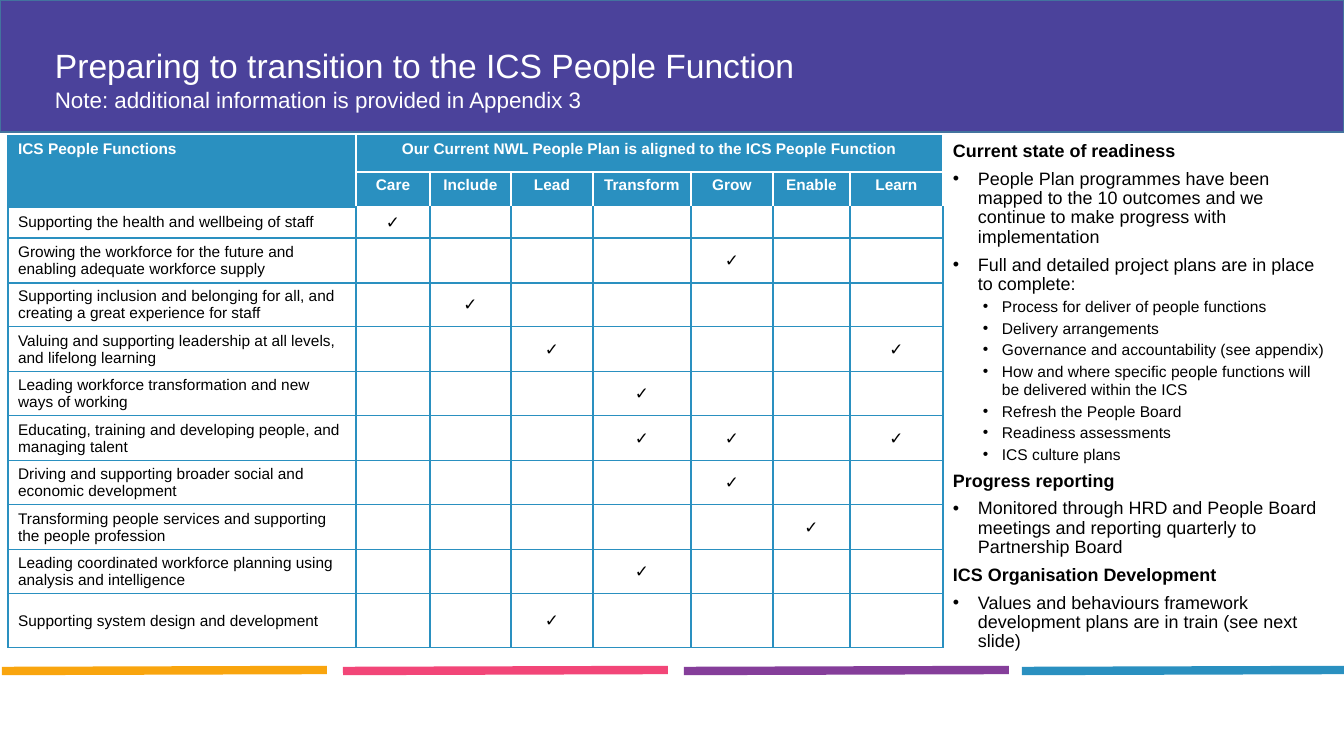
from lxml.etree import SubElement
from pptx import Presentation
from pptx.dml.color import RGBColor
from pptx.enum.shapes import MSO_CONNECTOR as CONNECTOR, MSO_SHAPE as SHAPE
from pptx.enum.text import MSO_ANCHOR as ANCHOR, PP_ALIGN as ALIGN
from pptx.oxml.ns import qn
from pptx.util import Emu, Pt

TITLE = "Preparing to transition to the ICS People Function"
NOTE = "Note: additional information is provided in Appendix 3"
FUNCTIONS_HEADING = "ICS People Functions"
PLAN_HEADING = "Our Current NWL People Plan is aligned to the ICS People Function"
THEMES = ["Care", "Include", "Lead", "Transform", "Grow", "Enable", "Learn"]
FUNCTIONS = [
    ("Supporting the health and wellbeing of staff", ["Care"]),
    ("Growing the workforce for the future and enabling adequate workforce supply", ["Grow"]),
    ("Supporting inclusion and belonging for all, and creating a great experience for staff",
     ["Include"]),
    ("Valuing and supporting leadership at all levels, and lifelong learning", ["Lead", "Learn"]),
    ("Leading workforce transformation and new ways of working", ["Transform"]),
    ("Educating, training and developing people, and managing talent",
     ["Transform", "Grow", "Learn"]),
    ("Driving and supporting broader social and economic development", ["Grow"]),
    ("Transforming people services and supporting the people profession", ["Enable"]),
    ("Leading coordinated workforce planning using analysis and intelligence", ["Transform"]),
    ("Supporting system design and development", ["Lead"]),
]
READINESS = [
    ("heading", "Current state of readiness"),
    ("bullet", "People Plan programmes have been mapped to the 10 outcomes and we continue to "
               "make progress with implementation"),
    ("bullet", "Full and detailed project plans are in place to complete:"),
    ("detail", "Process for deliver of people functions"),
    ("detail", "Delivery arrangements"),
    ("detail", "Governance and accountability (see appendix)"),
    ("detail", "How and where specific people functions will be delivered within the ICS"),
    ("detail", "Refresh the People Board"),
    ("detail", "Readiness assessments"),
    ("detail", "ICS culture plans"),
    ("heading", "Progress reporting"),
    ("bullet", "Monitored through HRD and People Board meetings and reporting quarterly to "
               "Partnership Board"),
    ("heading", "ICS Organisation Development"),
    ("bullet", "Values and behaviours framework development plans are in train (see next slide)"),
]
# kind: level, size, bold, line spacing, space before, left margin px, hanging px
STYLES = {
    "heading": (0, 12.8, True, 0.9, 6, 0, 0),
    "bullet": (0, 12.8, False, 0.9, 6, 25, 25),
    "detail": (1, 11.1, False, 1.0, 2, 49, 19),
}
STRIPES = [(2, "F9A50E"), (343, "F24678"), (684, "853E9A"), (1022, "2A90C0")]
COLUMN_WIDTHS = [348, 74, 81, 82, 98, 82, 77, 93]
ROW_HEIGHTS = [36, 35, 31] + [45, 44] * 4 + [54]
HEADER_ROWS = 2
BLUE, WHITE, BLACK = "2A90C0", "FFFFFF", "000000"


def px(length):
    return Emu(round(length * 12192000 / 1344))


def color(value):
    return RGBColor.from_string(value)


def set_font(paragraph, size, tint, bold=False):
    font = paragraph.font
    font.name, font.size, font.bold = "Arial", Pt(size), bold
    font.color.rgb = color(tint)


def add_text(slide, left, top, width, height, anchor=ANCHOR.TOP):
    frame = slide.shapes.add_textbox(px(left), px(top), px(width), px(height)).text_frame
    frame.word_wrap = True
    frame.vertical_anchor = anchor
    return frame


def add_banner(slide):
    band = slide.shapes.add_shape(SHAPE.RECTANGLE, 0, 0, px(1344), px(132))
    band.shadow.inherit = False
    band.fill.solid()
    band.fill.fore_color.rgb = color("4B429B")
    band.line.color.rgb = color("43739E")
    band.line.width = Pt(1)
    for text, size, box in ((TITLE, 24, (45, 36, 1254, 59, ANCHOR.MIDDLE)),
                            (NOTE, 16, (45, 81, 611, 37))):
        line = add_text(slide, *box).paragraphs[0]
        line.text = text
        set_font(line, size, WHITE)


def add_stripes(slide):
    for left, tint in STRIPES:
        stripe = slide.shapes.add_connector(
            CONNECTOR.STRAIGHT, px(left), px(671), px(left + 325), px(670))
        stripe.line.color.rgb = color(tint)
        stripe.line.width = Pt(6)
        SubElement(stripe._element.spPr, qn("a:effectLst"))


def border_colors(row, column):
    """Colours of the left, right, top and bottom borders of a cell."""
    if row >= HEADER_ROWS:
        below_header = row == HEADER_ROWS and column > 0
        return BLUE, BLUE, WHITE if below_header else BLUE, BLUE
    first = column == 0
    top_right = row == 0 and column == len(THEMES)
    return (BLUE if first else WHITE, BLUE if top_right else WHITE,
            BLUE if first or row == 0 else WHITE, BLUE if first else WHITE)


def draw_borders(cell, tints):
    properties = cell._tc.get_or_add_tcPr()
    for side, tint in zip("LRTB", tints):
        line = SubElement(properties, qn(f"a:ln{side}"), w=str(Pt(1)))
        SubElement(SubElement(line, qn("a:solidFill")), qn("a:srgbClr"), val=tint)


def add_alignment_table(slide):
    rows = [[FUNCTIONS_HEADING, PLAN_HEADING] + [""] * (len(THEMES) - 1), [""] + THEMES]
    rows += [[name] + ["✓" if theme in aligned else "" for theme in THEMES]
             for name, aligned in FUNCTIONS]
    table = slide.shapes.add_table(len(rows), len(COLUMN_WIDTHS), px(8), px(136),
                                   px(sum(COLUMN_WIDTHS)), px(sum(ROW_HEIGHTS))).table
    for column, width in zip(table.columns, COLUMN_WIDTHS):
        column.width = px(width)
    for row, height in zip(table.rows, ROW_HEIGHTS):
        row.height = px(height)
    for r, texts in enumerate(rows):
        header = r < HEADER_ROWS
        for c, text in enumerate(texts):
            cell = table.cell(r, c)
            draw_borders(cell, border_colors(r, c))
            cell.fill.solid()
            cell.fill.fore_color.rgb = color(BLUE if header else WHITE)
            if not header:
                cell.vertical_anchor = ANCHOR.MIDDLE
                cell.margin_top = cell.margin_bottom = px(1)
            paragraph = cell.text_frame.paragraphs[0]
            if text:
                paragraph.text = text
            paragraph.alignment = ALIGN.CENTER if c else ALIGN.LEFT
            set_font(paragraph, 12 if c and not header else 11, WHITE if header else BLACK, header)
    table.cell(0, 0).merge(table.cell(1, 0))
    table.cell(0, 1).merge(table.cell(0, len(THEMES)))


def add_readiness(slide):
    frame = add_text(slide, 943, 137, 397, 524)
    for i, (kind, text) in enumerate(READINESS):
        level, size, bold, spacing, before, margin, hanging = STYLES[kind]
        paragraph = frame.add_paragraph() if i else frame.paragraphs[0]
        paragraph.text = text
        paragraph.level = level
        paragraph.line_spacing = spacing
        if i:
            paragraph.space_before = Pt(before)
        if hanging:
            properties = paragraph._p.get_or_add_pPr()
            properties.set("marL", str(px(margin)))
            properties.set("indent", str(px(-hanging)))
            SubElement(properties, qn("a:buFont"), typeface="Arial")
            SubElement(properties, qn("a:buChar"), char="•")
        set_font(paragraph, size, BLACK, bold)


def main():
    presentation = Presentation()
    presentation.slide_width, presentation.slide_height = px(1344), px(756)
    slide = presentation.slides.add_slide(presentation.slide_layouts[6])
    add_banner(slide)
    add_stripes(slide)
    add_readiness(slide)
    add_alignment_table(slide)
    presentation.save("out.pptx")


if __name__ == "__main__":
    main()
